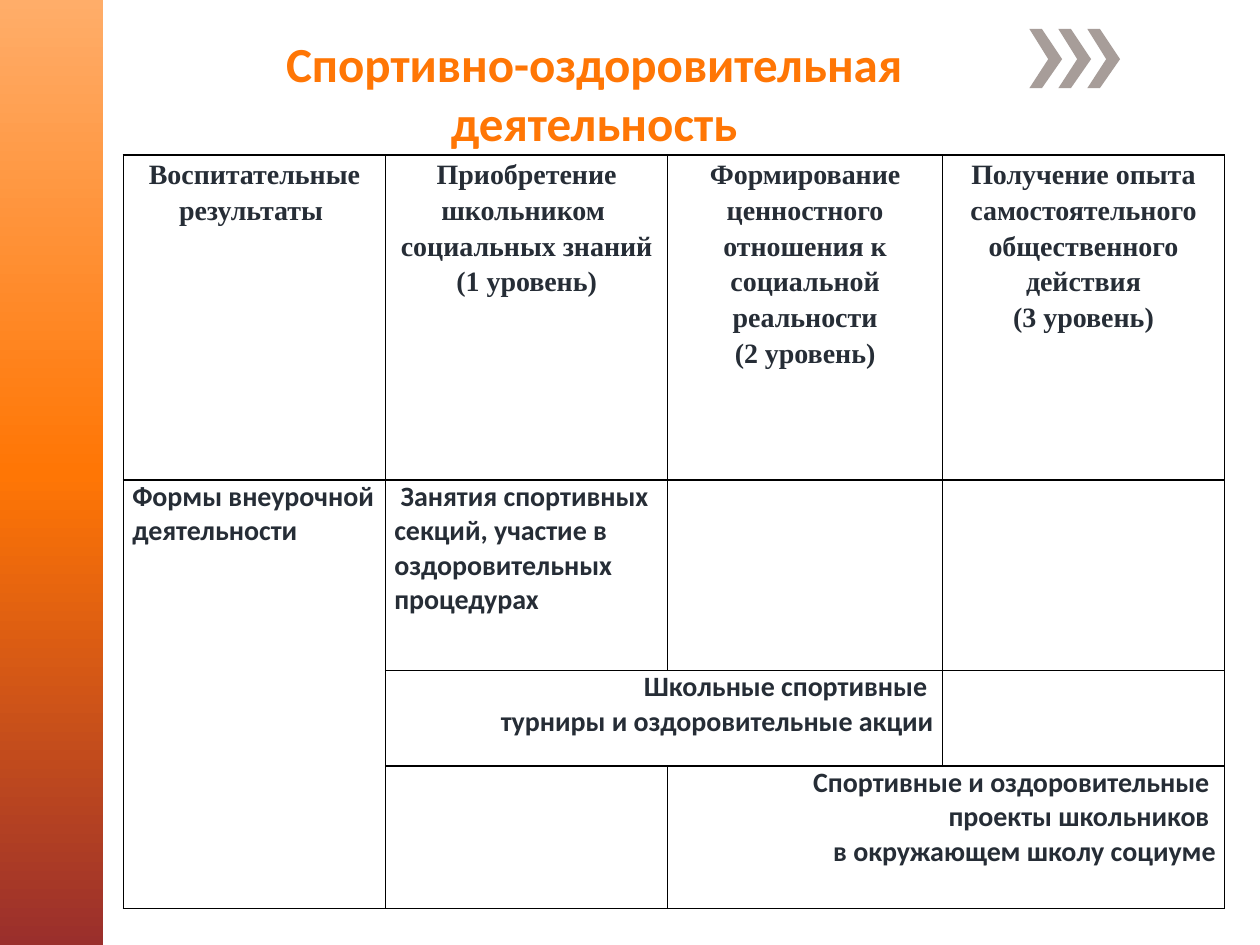
from copy import deepcopy

from lxml import etree
from pptx import Presentation
from pptx.dml.color import RGBColor
from pptx.enum import shapes, text
from pptx.oxml import ns
from pptx.util import Inches, Pt

ORANGE = RGBColor(0xFF, 0x76, 0x05)
INK = RGBColor(0x26, 0x2D, 0x36)
TAUPE = RGBColor(0xA7, 0x9D, 0x99)
BAND_STOPS = [
    (0, RGBColor(0xFF, 0xAD, 0x69)),
    (0.5, ORANGE),
    (1, RGBColor(0x9A, 0x2F, 0x2C)),
]
LEFT, CENTER, RIGHT = text.PP_ALIGN.LEFT, text.PP_ALIGN.CENTER, text.PP_ALIGN.RIGHT

TITLE = "Спортивно-оздоровительная деятельность"
HEADERS = [
    ["Воспитательные результаты "],
    ["Приобретение школьником  социальных знаний", "(1 уровень)"],
    ["Формирование ценностного отношения к социальной реальности", "(2 уровень)"],
    ["Получение опыта самостоятельного общественного действия", "(3 уровень)"],
]
# row, column, rows spanned, columns spanned, alignment, paragraphs
ACTIVITIES = [
    (1, 0, 3, 1, LEFT, ["Формы внеурочной деятельности"]),
    (1, 1, 1, 1, LEFT,
     [" Занятия спортивных секций, участие в оздоровительных процедурах"]),
    (2, 1, 1, 2, RIGHT, ["Школьные спортивные ", "турниры и оздоровительные акции"]),
    (3, 2, 1, 2, RIGHT,
     ["Спортивные и оздоровительные ", "проекты школьников ",
      "в окружающем школу социуме"]),
]
COLUMN_WIDTHS = [2.08, 2.24, 2.18, 2.24]
ROW_HEIGHTS = [2.58, 1.51, 0.76, 1.13]

CHEVRON = [(0.1, 0), (0, 0), (0.15, 0.24), (0, 0.47), (0.1, 0.47), (0.26, 0.24)]
CHEVRON_LEFT, CHEVRON_TOP, CHEVRON_STEP = 8.17, 0.23, 0.23


def write(frame, paragraphs, size=16, font="Calibri", color=INK, align=LEFT, spacing=1.0):
    frame.word_wrap = True
    for i, line in enumerate(paragraphs):
        paragraph = frame.paragraphs[0] if i == 0 else frame.add_paragraph()
        paragraph.alignment = align
        paragraph.line_spacing = spacing
        run = paragraph.add_run()
        run.text = line
        run.font.size = Pt(size)
        run.font.name = font
        run.font.bold = True
        run.font.color.rgb = color


def add_band(slide):
    band = slide.shapes.add_shape(
        shapes.MSO_SHAPE.RECTANGLE, 0, 0, Inches(0.82), Inches(7.5))
    band.shadow.inherit = False
    band.line.fill.background()
    band.fill.gradient()
    band.fill.gradient_angle = 270
    stop_list = band._element.spPr.find(".//" + ns.qn("a:gsLst"))
    stop_list.append(deepcopy(stop_list[0]))
    for stop, (position, color) in zip(band.fill.gradient_stops, BAND_STOPS):
        stop.position = position
        stop.color.rgb = color


def add_chevrons(slide):
    for i in range(3):
        left = CHEVRON_LEFT + i * CHEVRON_STEP
        points = [(Inches(left + x), Inches(CHEVRON_TOP + y)) for x, y in CHEVRON]
        builder = slide.shapes.build_freeform(*points[0])
        builder.add_line_segments(points[1:], close=True)
        chevron = builder.convert_to_shape()
        chevron.shadow.inherit = False
        chevron.fill.solid()
        chevron.fill.fore_color.rgb = TAUPE
        chevron.line.fill.background()


def format_cell(cell):
    """Clear the fill, tighten the margins and draw black 1 pt borders."""
    cell.margin_left = cell.margin_right = Inches(0.07)
    cell.margin_top = cell.margin_bottom = 0
    properties = cell._tc.get_or_add_tcPr()
    for side in ("a:lnL", "a:lnR", "a:lnT", "a:lnB"):
        border = etree.SubElement(properties, ns.qn(side), w=str(Pt(1)))
        fill = etree.SubElement(border, ns.qn("a:solidFill"))
        etree.SubElement(fill, ns.qn("a:srgbClr"), val="000000")
    cell.fill.background()


def add_results_table(slide):
    table = slide.shapes.add_table(
        len(ROW_HEIGHTS), len(COLUMN_WIDTHS), Inches(0.98), Inches(1.23),
        Inches(sum(COLUMN_WIDTHS)), Inches(sum(ROW_HEIGHTS))).table
    table.first_row = table.horz_banding = False
    for column, width in zip(table.columns, COLUMN_WIDTHS):
        column.width = Inches(width)
    for row, height in zip(table.rows, ROW_HEIGHTS):
        row.height = Inches(height)
    for cell in table.iter_cells():
        format_cell(cell)
    for column, header in enumerate(HEADERS):
        write(table.cell(0, column).text_frame, header,
              font="Times New Roman", align=CENTER, spacing=1.15)
    for row, column, row_span, column_span, align, paragraphs in ACTIVITIES:
        cell = table.cell(row, column)
        if row_span * column_span > 1:
            cell.merge(table.cell(row + row_span - 1, column + column_span - 1))
        write(cell.text_frame, paragraphs, align=align)


def main():
    prs = Presentation()
    prs.slide_width, prs.slide_height = Inches(10), Inches(7.5)
    slide = prs.slides.add_slide(prs.slide_layouts[6])
    add_band(slide)
    add_chevrons(slide)
    title = slide.shapes.add_textbox(
        Inches(1.33), Inches(0.22), Inches(6.77), Inches(1.04))
    write(title.text_frame, [TITLE], size=28, color=ORANGE, align=CENTER)
    add_results_table(slide)
    prs.save("out.pptx")


if __name__ == "__main__":
    main()
